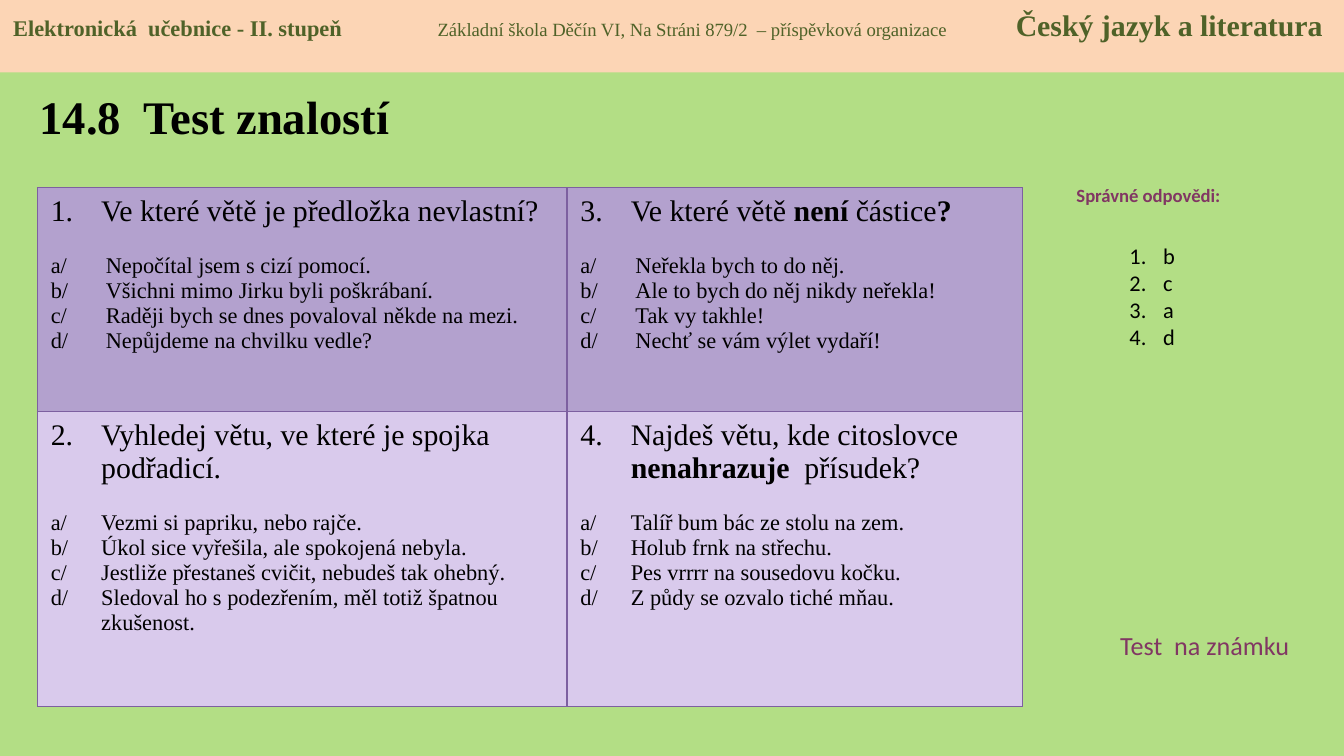
from lxml.etree import SubElement as add_element
from pptx import Presentation
from pptx.dml.color import RGBColor as Color
from pptx.enum.shapes import MSO_SHAPE as Preset
from pptx.enum.text import MSO_ANCHOR as Anchor, PP_ALIGN as Align
from pptx.oxml.ns import qn
from pptx.util import Pt

TITLE = "14.8  Test znalostí"
HEADER = [  # text, type size, bold
    ("Elektronická  učebnice - II. stupeň", "small", True),
    ("Základní škola Děčín VI, Na Stráni 879/2  – příspěvková organizace", "tiny", False),
    ("Český jazyk a literatura", "question", True),
]
HEADER_TABS = [227.4, 537.1]

# Each question: number, runs of (text, bold), options a/ to d/
QUESTIONS = [
    [
        (1, [("Ve které větě je předložka nevlastní?", False)],
         ["Nepočítal jsem s cizí pomocí.", "Všichni mimo Jirku byli poškrábaní.",
          "Raději bych se dnes povaloval někde na mezi.", "Nepůjdeme na chvilku vedle?"]),
        (3, [("Ve které větě ", False), ("není ", True), ("částice", False), ("?", True)],
         ["Neřekla bych to do něj.", "Ale to bych do něj nikdy neřekla!",
          "Tak vy takhle!", "Nechť se vám výlet vydaří!"]),
    ],
    [
        (2, [("Vyhledej větu, ve které je spojka podřadicí.", False)],
         ["Vezmi si papriku, nebo rajče.", "Úkol sice vyřešila, ale spokojená nebyla.",
          "Jestliže přestaneš cvičit, nebudeš tak ohebný.",
          "Sledoval ho s podezřením, měl totiž špatnou zkušenost."]),
        (4, [("Najdeš větu, kde citoslovce ", False), ("nenahrazuje ", True),
             (" přísudek?", False)],
         ["Talíř bum bác ze stolu na zem.", "Holub frnk na střechu.",
          "Pes vrrrr na sousedovu kočku.", "Z půdy se ozvalo tiché mňau."]),
    ],
]
ANSWERS_TITLE = "Správné odpovědi:"
ANSWERS = ["b", "c", "a", "d"]
GRADED = "Test  na známku"

THEME = {
    "serif": "Times New Roman", "sans": "Calibri",
    "background": "B3DE85", "band": "FCD5B5", "header": "4F6228",
    "ink": "000000", "accent": "813763", "border": "7D60A0",
    "rows": ["B3A1CE", "D9CAEC"],
    "tiny": 10, "small": 12, "graded": 14, "question": 16, "title": 25,
}
COLUMN_WIDTHS = [283.7, 244]
ROW_HEIGHTS = [120, 158]
QUESTION_INDENT = 27
OPTION_INDENTS = [29.5, 27]
OPTIONS_GAP = 13.8
BORDER_WIDTH = 0.75


def add_run(paragraph, text, size, font="serif", color="ink", bold=False):
    run = paragraph.add_run()
    run.text = text
    values = {"name": THEME[font], "size": Pt(THEME[size]), "bold": bold}
    for name, value in values.items():
        setattr(run.font, name, value)
    run.font.color.rgb = Color.from_string(THEME[color])


def hang(paragraph, indent, number=None):
    """Give a hanging indent and, with a number, automatic numbering from it."""
    properties = paragraph._p.get_or_add_pPr()
    properties.set("marL", str(Pt(indent)))
    properties.set("indent", str(-Pt(indent)))
    if number:
        bullet = add_element(properties, qn("a:buAutoNum"), type="arabicPeriod")
        if number > 1:
            bullet.set("startAt", str(number))


def next_paragraph(frame, index):
    return frame.add_paragraph() if index else frame.paragraphs[0]


def add_text_box(slide, left, top, width, height):
    frame = slide.shapes.add_textbox(Pt(left), Pt(top), Pt(width), Pt(height)).text_frame
    frame.word_wrap = True
    return frame


def add_header(slide):
    band = slide.shapes.add_shape(Preset.RECTANGLE, 0, 0, Pt(720), Pt(38.8))
    band.shadow.inherit = False
    band.fill.solid()
    band.fill.fore_color.rgb = Color.from_string(THEME["band"])
    band.line.fill.background()
    band.text_frame.vertical_anchor = Anchor.TOP
    paragraph = band.text_frame.paragraphs[0]
    paragraph.alignment = Align.LEFT
    tabs = add_element(paragraph._p.get_or_add_pPr(), qn("a:tabLst"))
    for position in HEADER_TABS:
        add_element(tabs, qn("a:tab"), pos=str(Pt(position)), algn="l")
    for index, (text, size, bold) in enumerate(HEADER):
        add_run(paragraph, ("\t" if index else "") + text, size, color="header", bold=bold)


def style_cell(cell, fill):
    properties = cell._tc.get_or_add_tcPr()
    for side in ("lnL", "lnR", "lnT", "lnB"):
        line = add_element(properties, qn(f"a:{side}"), w=str(Pt(BORDER_WIDTH)))
        solid = add_element(line, qn("a:solidFill"))
        add_element(solid, qn("a:srgbClr"), val=THEME["border"])
    cell.fill.solid()
    cell.fill.fore_color.rgb = Color.from_string(fill)


def fill_question(frame, number, question, options, option_indent):
    heading = frame.paragraphs[0]
    hang(heading, QUESTION_INDENT, number)
    for text, bold in question:
        add_run(heading, text, "question", bold=bold)
    for letter, option in zip("abcd", options):
        paragraph = frame.add_paragraph()
        hang(paragraph, option_indent)
        if letter == "a":
            paragraph.space_before = Pt(OPTIONS_GAP)
        add_run(paragraph, f"{letter}/\t{option}", "small")


def add_questions(slide):
    table = slide.shapes.add_table(
        len(ROW_HEIGHTS), len(COLUMN_WIDTHS), Pt(20), Pt(100.6),
        Pt(sum(COLUMN_WIDTHS)), Pt(sum(ROW_HEIGHTS))).table
    table.first_row = table.horz_banding = False
    for column, width in zip(table.columns, COLUMN_WIDTHS):
        column.width = Pt(width)
    for row_index, row in enumerate(QUESTIONS):
        table.rows[row_index].height = Pt(ROW_HEIGHTS[row_index])
        for column_index, entry in enumerate(row):
            cell = table.cell(row_index, column_index)
            style_cell(cell, THEME["rows"][row_index])
            fill_question(cell.text_frame, *entry, OPTION_INDENTS[row_index])


def add_answers(slide):
    heading = add_text_box(slide, 558.7, 95, 113, 19.4).paragraphs[0]
    heading.alignment = Align.CENTER
    add_run(heading, ANSWERS_TITLE, "tiny", "sans", "accent", True)
    frame = add_text_box(slide, 598, 126.4, 40, 66)
    for index, answer in enumerate(ANSWERS):
        paragraph = next_paragraph(frame, index)
        hang(paragraph, 18, 1)
        add_run(paragraph, answer, "small", "sans")


def main():
    presentation = Presentation()
    presentation.slide_width, presentation.slide_height = Pt(720), Pt(405)
    slide = presentation.slides.add_slide(presentation.slide_layouts[6])
    slide.background.fill.solid()
    slide.background.fill.fore_color.rgb = Color.from_string(THEME["background"])

    title = add_text_box(slide, 14.2, 38.4, 235.4, 46.8)
    title.vertical_anchor = Anchor.MIDDLE
    add_run(title.paragraphs[0], TITLE, "title", bold=True)
    add_questions(slide)
    add_answers(slide)
    graded = add_text_box(slide, 593, 333.5, 113, 24.2)
    add_run(graded.paragraphs[0], GRADED, "graded", "sans", "accent")
    add_header(slide)
    presentation.save("out.pptx")


if __name__ == "__main__":
    main()
